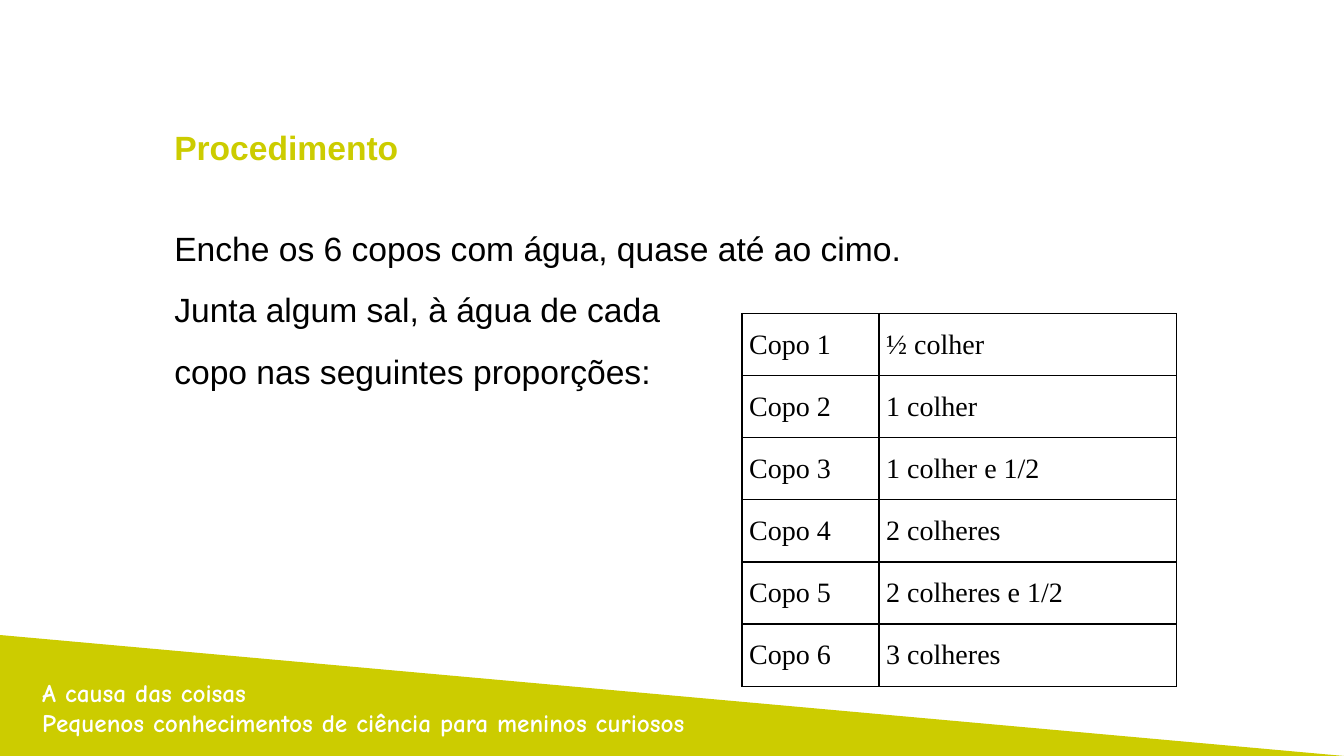
from lxml import etree
from pptx import Presentation
from pptx.dml.color import RGBColor
from pptx.enum.shapes import MSO_SHAPE
from pptx.enum.text import MSO_AUTO_SIZE, PP_ALIGN
from pptx.oxml.ns import qn
from pptx.util import Inches, Pt

TRIANGLE = MSO_SHAPE.ISOSCELES_TRIANGLE
JUSTIFY = PP_ALIGN.JUSTIFY
GROW = MSO_AUTO_SIZE.SHAPE_TO_FIT_TEXT

COLORS = {"lime": "CCCC00", "ink": "000000", "paper": "FFFFFF"}
FONTS = {"body": "Arial", "footer": "Comic Neue", "table": "Times New Roman"}

FOOTER = ["A causa das coisas", "Pequenos conhecimentos de ciência para meninos curiosos"]
STEPS = [
    "Enche os 6 copos com água, quase até ao cimo.",
    "Junta algum sal, à água de cada",
    "copo nas seguintes proporções:",
]
DOSES = ["½ colher", "1 colher", "1 colher e 1/2", "2 colheres", "2 colheres e 1/2", "3 colheres"]


class Deck:
    """Draws styled elements placed in percent of the slide's width and height."""

    def __init__(self, prs):
        self.prs = prs
        self.s = prs.slides.add_slide(prs.slide_layouts[6])

    def x(self, share):
        return int(self.prs.slide_width * share / 100)

    def y(self, share):
        return int(self.prs.slide_height * share / 100)

    def box(self, left, top, width, height):
        return self.x(left), self.y(top), self.x(width), self.y(height)

    def style(self, p, font, size, color, bold=False):
        for r in p.runs:
            r.font.name = FONTS[font]
            r.font.size = Pt(size)
            r.font.bold = bold
            r.font.color.rgb = RGBColor.from_string(COLORS[color])

    def wedge(self, place, color):
        sp = self.s.shapes.add_shape(TRIANGLE, *self.box(*place))
        sp.adjustments[0] = 0
        sp.shadow.inherit = False
        sp.fill.solid()
        sp.fill.fore_color.rgb = RGBColor.from_string(COLORS[color])
        sp.line.fill.background()

    def text(self, place, lines):
        sp = self.s.shapes.add_textbox(*self.box(*place))
        tf = sp.text_frame
        tf.text = "\n".join(lines)
        tf.word_wrap = True
        tf.auto_size = GROW
        return tf.paragraphs

    def border(self, cell, color, width):
        tc_pr = cell._tc.get_or_add_tcPr()
        for side in ("a:lnL", "a:lnR", "a:lnT", "a:lnB"):
            ln = etree.SubElement(tc_pr, qn(side), w=str(Pt(width)))
            fill = etree.SubElement(ln, qn("a:solidFill"))
            etree.SubElement(fill, qn("a:srgbClr"), val=COLORS[color])

    def table(self, left, top, col_widths, row_height, rows):
        place = self.box(left, top, sum(col_widths), row_height * len(rows))
        table = self.s.shapes.add_table(len(rows), len(col_widths), *place).table
        table.first_row = table.horz_banding = False
        for col, width in zip(table.columns, col_widths):
            col.width = self.x(width)
        for row, values in zip(table.rows, rows):
            row.height = self.y(row_height)
            for cell, value in zip(row.cells, values):
                self.border(cell, "ink", 1)
                cell.fill.background()
                cell.margin_left = cell.margin_right = self.x(0.53)
                cell.margin_top = cell.margin_bottom = 0
                p = cell.text_frame.paragraphs[0]
                p.text = value
                p.alignment = JUSTIFY
                p.line_spacing = 1.5
                self.style(p, "table", 20, "ink")


def main():
    prs = Presentation()
    prs.slide_width, prs.slide_height = Inches(13.33), Inches(7.5)
    deck = Deck(prs)

    deck.wedge((0, 84, 100, 16), "lime")
    for p in deck.text((2.4, 88.93, 51.84, 9.47), FOOTER):
        deck.style(p, "footer", 18, "paper", bold=True)

    heading, *steps = deck.text((12.23, 16.13, 78.77, 36.8), ["Procedimento", *STEPS])
    deck.style(heading, "body", 24, "lime", bold=True)
    heading.space_after = Pt(28)
    for p in steps:
        p.alignment = JUSTIFY
        p.line_spacing = Pt(32)
        p.space_before = Pt(12)
        deck.style(p, "body", 24, "ink")

    rows = [(f"Copo {number}", dose) for number, dose in enumerate(DOSES, 1)]
    deck.table(55.21, 41.47, (10.2, 22.13), 8.22, rows)
    prs.save("out.pptx")


if __name__ == "__main__":
    main()
